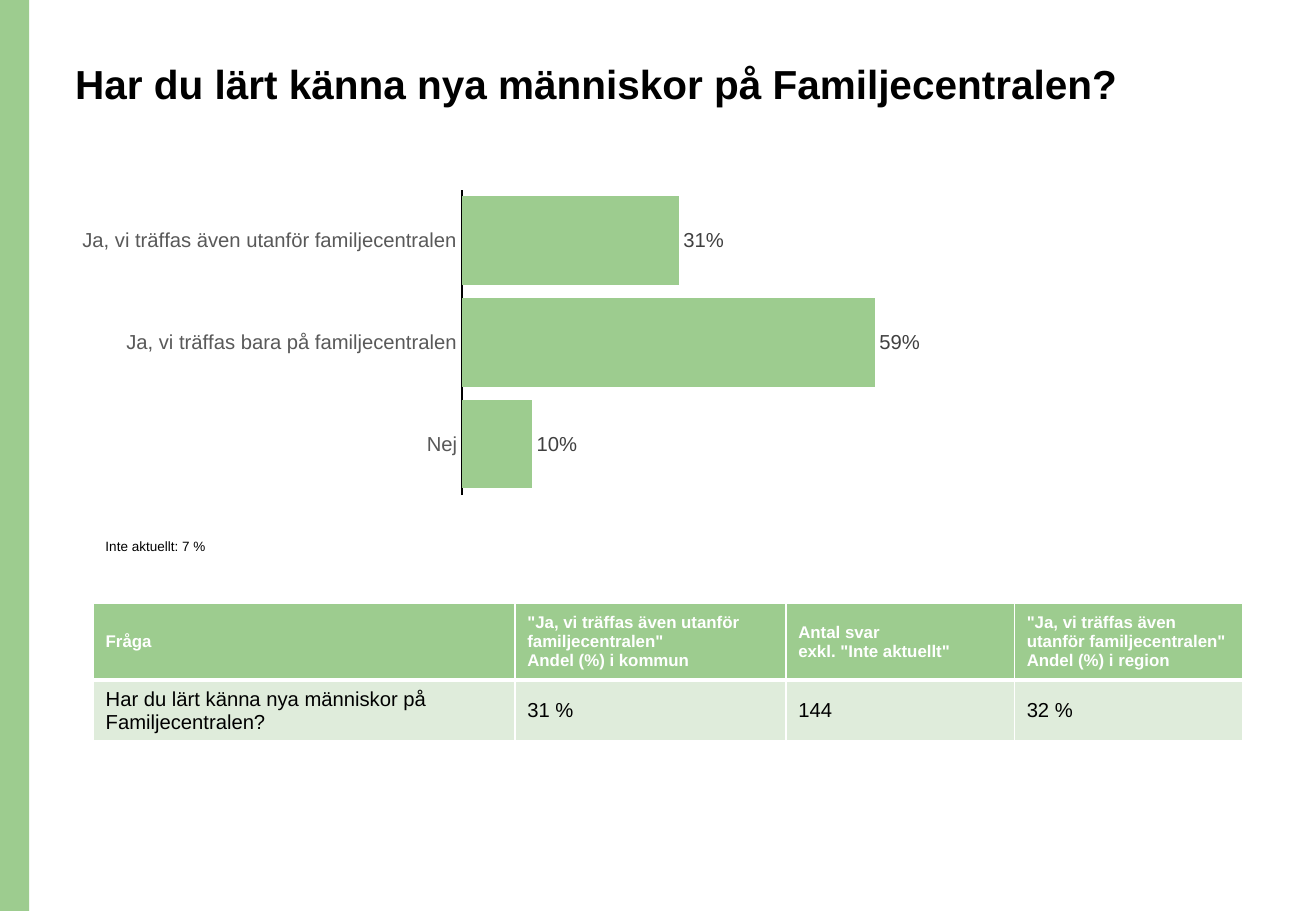
"""Builds a survey slide with a bar chart and a table of results."""
from lxml import etree
from pptx import Presentation, util as u
from pptx.chart.data import CategoryChartData
from pptx.dml.color import RGBColor
from pptx.enum import chart as charts, shapes, text
from pptx.oxml import parse_xml
from pptx.oxml.ns import nsdecls, qn

PX = 9144
GREEN, PALE, WHITE, BLACK = "9DCC8F", "DFECDB", "FFFFFF", "000000"
QUESTION = "Har du lärt känna nya människor på Familjecentralen?"
YES_OUTSIDE = "Ja, vi träffas även utanför familjecentralen"


def color(code):
    return RGBColor.from_string(code)


def style(font, size, code, bold=False):
    font.name, font.size, font.bold = "Arial", u.Pt(size), bold
    font.color.rgb = color(code)


deck = Presentation()
deck.slide_width, deck.slide_height = 1083 * PX, 750 * PX
page = deck.slides.add_slide(deck.slide_layouts[6])

band = page.shapes.add_shape(shapes.MSO_SHAPE.RECTANGLE, 0, 0, 24 * PX, 750 * PX)
band.shadow.inherit = False
band.fill.solid()
band.fill.fore_color.rgb = color(GREEN)
band.line.fill.background()

for words, place, size, bold, spacing in [
    (QUESTION, (52, 48, 934, 102), 24, True, 0.9),
    ("Inte aktuellt: 7 %", (77, 431, 210, 28), 8, False, 1.5),
]:
    box = page.shapes.add_textbox(*[length * PX for length in place])
    box.text_frame.word_wrap = True
    box.text_frame.text = words
    para = box.text_frame.paragraphs[0]
    para.line_spacing = spacing
    style(para.runs[0].font, size, BLACK, bold)

answers = CategoryChartData(number_format="0%")
answers.categories = [YES_OUTSIDE, "Ja, vi träffas bara på familjecentralen", "Nej"]
answers.add_series("Andel", [0.31, 0.59, 0.1])
chart = page.shapes.add_chart(
    charts.XL_CHART_TYPE.BAR_CLUSTERED, 52 * PX, 151 * PX, 746 * PX, 262 * PX, answers
).chart
chart.has_legend = chart.has_title = False
style(chart.font, 10, BLACK)

categories = chart.category_axis
categories.reverse_order = True
categories.major_tick_mark = charts.XL_TICK_MARK.NONE
categories.format.line.color.rgb = color(BLACK)
categories.format.line.width = u.Pt(0.75)
style(categories.tick_labels.font, 12, "595959")

shares = chart.value_axis
shares.visible = shares.has_major_gridlines = False
shares.minimum_scale, shares.maximum_scale = 0, 0.7

plot = chart.plots[0]
plot.gap_width = 15
plot.vary_by_categories = False
bars = plot.series[0]
bars.format.fill.solid()
bars.format.fill.fore_color.rgb = color(GREEN)
plot.has_data_labels = True
labels = plot.data_labels
labels.show_value = True
labels.number_format, labels.number_format_is_linked = "0%", False
labels.position = charts.XL_LABEL_POSITION.OUTSIDE_END
style(labels.font, 12, "404040")

area = chart._chartSpace.chart.plotArea
for old in area.findall(qn("c:layout")):
    area.remove(old)
layout = parse_xml(f"<c:layout {nsdecls('c')}><c:manualLayout/></c:layout>")
for tag, value in [("layoutTarget", "inner"), ("xMode", "edge"), ("yMode", "edge"),
                   ("x", "0.44"), ("y", "0.02"), ("w", "0.54"), ("h", "0.96")]:
    etree.SubElement(layout[0], qn(f"c:{tag}"), val=value)
area.insert(0, layout)

rows = [
    ["Fråga", f'"{YES_OUTSIDE}"\nAndel (%) i kommun',
     'Antal svar\nexkl. "Inte aktuellt"', f'"{YES_OUTSIDE}"\nAndel (%) i region'],
    [QUESTION, "31 %", "144", "32 %"],
]
row_styles = [(63, GREEN, 10, WHITE, True), (30, PALE, 12, BLACK, False)]
table = page.shapes.add_table(2, 4, 77 * PX, 497 * PX, 946 * PX, 93 * PX).table
for column, width in zip(table.columns, [347, 223, 188, 188]):
    column.width = width * PX
for r, (height, fill, size, ink, bold) in enumerate(row_styles):
    table.rows[r].height = height * PX
    for c, words in enumerate(rows[r]):
        cell = table.cell(r, c)
        cell.text_frame.text = words
        cell.vertical_anchor = text.MSO_ANCHOR.MIDDLE
        for para in cell.text_frame.paragraphs:
            style(para.runs[0].font, size, ink, bold)
        borders = {"L": 1, "R": 1, "T": 1 if r == 0 else 3, "B": 3 if r == 0 else 1}
        for side, points in borders.items():
            cell._tc.get_or_add_tcPr().append(parse_xml(
                f'<a:ln{side} {nsdecls("a")} w="{u.Pt(points)}"><a:solidFill>'
                f'<a:srgbClr val="{WHITE}"/></a:solidFill></a:ln{side}>'))
        cell.fill.solid()
        cell.fill.fore_color.rgb = color(fill)

deck.save("out.pptx")
